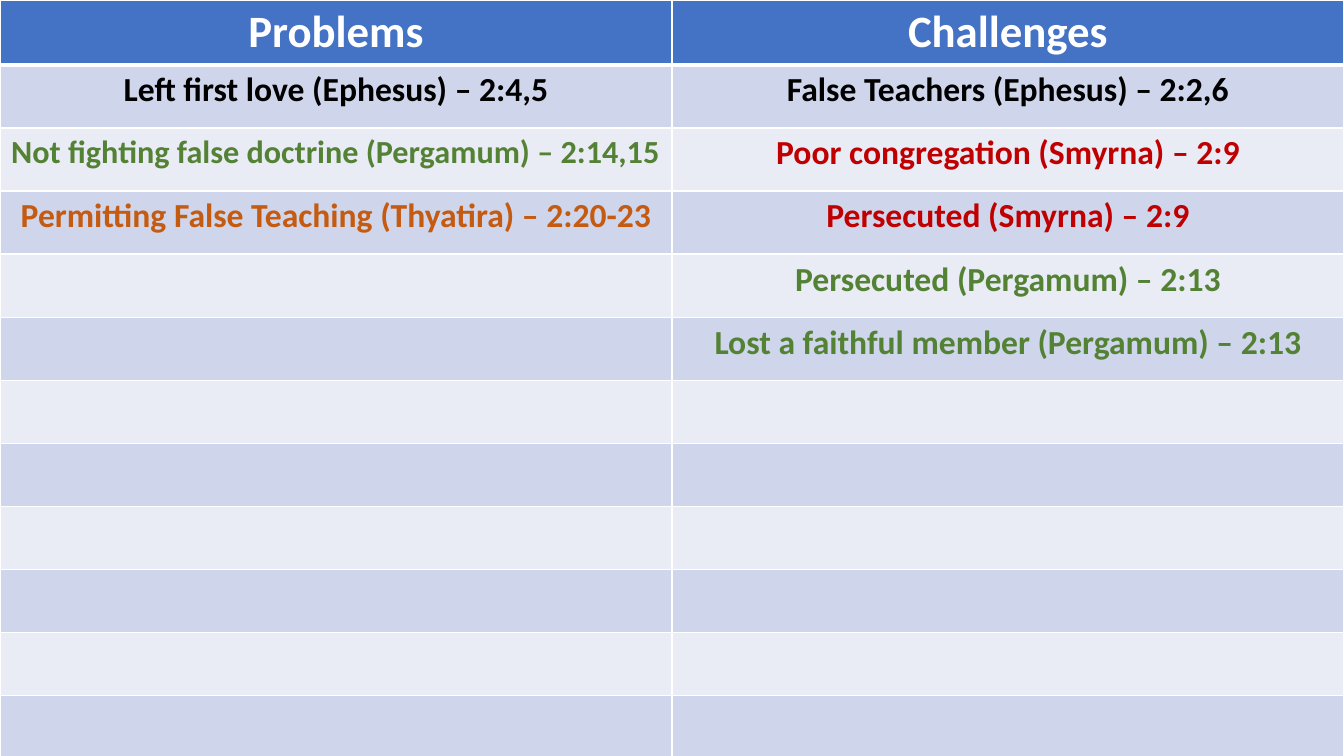
from dataclasses import dataclass
from itertools import zip_longest

from lxml.etree import SubElement
from pptx import Presentation
from pptx.dml.color import RGBColor
from pptx.enum.text import PP_ALIGN
from pptx.oxml.ns import qn
from pptx.util import Pt


@dataclass(frozen=True)
class Theme:
    font: str = "Calibri"
    white: str = "FFFFFF"
    black: str = "000000"
    green: str = "548235"
    red: str = "C00000"
    orange: str = "C55A11"
    header: str = "4472C4"
    bands: tuple = ("CFD5EA", "E9EBF5")
    title_size: int = 32
    body_size: int = 24
    tight_size: int = 23
    border: int = 1
    header_border: int = 3


THEME = Theme()
SLIDE_W, SLIDE_H = 960, 540
ROW_COUNT = 12
ROW_H = 45.06

HEADINGS = [(t, THEME.white, THEME.title_size) for t in ("Problems", "Challenges")]
PROBLEMS = [
    ("Left first love (Ephesus) – 2:4,5", THEME.black, THEME.body_size),
    ("Not fighting false doctrine (Pergamum) – 2:14,15", THEME.green, THEME.tight_size),
    ("Permitting False Teaching (Thyatira) – 2:20-23", THEME.orange, THEME.body_size),
]
CHALLENGES = [
    ("False Teachers (Ephesus) – 2:2,6", THEME.black, THEME.body_size),
    ("Poor congregation (Smyrna) – 2:9", THEME.red, THEME.body_size),
    ("Persecuted (Smyrna) – 2:9", THEME.red, THEME.body_size),
    ("Persecuted (Pergamum) – 2:13", THEME.green, THEME.body_size),
    ("Lost a faithful member (Pergamum) – 2:13", THEME.green, THEME.body_size),
]


def set_borders(cell, widths):
    tc_pr = cell._tc.get_or_add_tcPr()
    for side, width in widths.items():
        ln = SubElement(tc_pr, qn(f"a:ln{side}"), w=str(Pt(width)))
        fill = SubElement(ln, qn("a:solidFill"))
        SubElement(fill, qn("a:srgbClr"), val=THEME.white)


def write_cell(cell, text, color, size):
    p = cell.text_frame.paragraphs[0]
    p.alignment = PP_ALIGN.CENTER
    r = p.add_run()
    r.text = text
    for name, value in {"name": THEME.font, "size": Pt(size), "bold": True}.items():
        setattr(r.font, name, value)
    r.font.color.rgb = RGBColor.from_string(color)


def add_comparison_table(s, left, top, width, height):
    entries = [HEADINGS, *zip_longest(PROBLEMS, CHALLENGES)]
    entries += [(None, None)] * (ROW_COUNT - len(entries))
    columns = len(HEADINGS)
    frame = s.shapes.add_table(
        ROW_COUNT, columns, Pt(left), Pt(top), Pt(width), Pt(height)
    )
    table = frame.table
    for column in table.columns:
        column.width = Pt(width / columns)
    for i, (row, items) in enumerate(zip(table.rows, entries)):
        row.height = Pt(height / ROW_COUNT)
        color = THEME.bands[(i - 1) % 2] if i else THEME.header
        widths = dict.fromkeys("LRTB", THEME.border)
        if i < 2:
            widths["T" if i else "B"] = THEME.header_border
        for cell, item in zip(row.cells, items):
            set_borders(cell, widths)
            cell.fill.solid()
            cell.fill.fore_color.rgb = RGBColor.from_string(color)
            if item:
                write_cell(cell, *item)


def main():
    prs = Presentation()
    prs.slide_width, prs.slide_height = Pt(SLIDE_W), Pt(SLIDE_H)
    s = prs.slides.add_slide(prs.slide_layouts[6])
    add_comparison_table(s, 0, 0, SLIDE_W, ROW_COUNT * ROW_H)
    prs.save("out.pptx")


if __name__ == "__main__":
    main()
